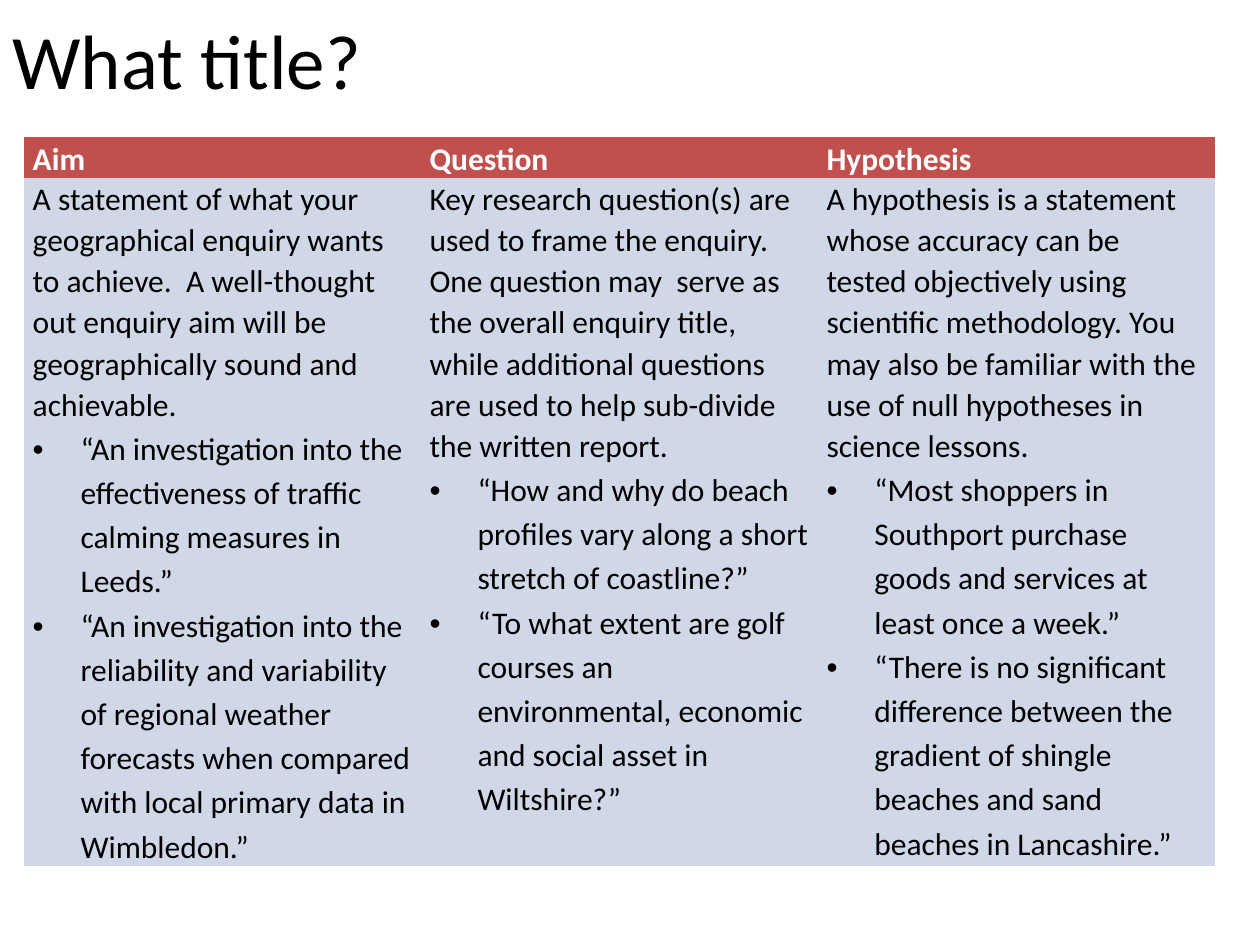
from lxml.etree import SubElement
from pptx import Presentation
from pptx.dml.color import RGBColor
from pptx.enum.text import MSO_ANCHOR
from pptx.oxml.ns import qn
from pptx.util import Inches, Pt

INK, WHITE, RED, PALE = "000000", "FFFFFF", "C0504D", "D0D8E8"
COL_W, ROW_H = 3.15, (0.32, 5.46)  # the body row holds its longest column
INDENT = Inches(0.38)

COLUMNS = [
    ("Aim",
     "A statement of what your geographical enquiry wants to achieve.  A well-thought out "
     "enquiry aim will be geographically sound and achievable.",
     ["“An investigation into the effectiveness of traffic calming measures in Leeds.”",
      "“An investigation into the reliability and variability of regional weather forecasts "
      "when compared with local primary data in Wimbledon.”"]),
    ("Question",
     "Key research question(s) are used to frame the enquiry. One question may  serve as the "
     "overall enquiry title, while additional questions are used to help sub-divide the "
     "written report.",
     ["“How and why do beach profiles vary along a short stretch of coastline?”",
      "“To what extent are golf courses an environmental, economic and social asset in "
      "Wiltshire?”"]),
    ("Hypothesis",
     "A hypothesis is a statement whose accuracy can be tested objectively using scientific "
     "methodology. You may also be familiar with the use of null hypotheses in science lessons.",
     ["“Most shoppers in Southport purchase goods and services at least once a week.”",
      "“There is no significant difference between the gradient of shingle beaches and sand "
      "beaches in Lancashire.”"]),
]


def rgb(color):
    return RGBColor.from_string(color)


def write(p, text, size=18, color=INK, bold=False, spacing=1.07, bullet=False):
    """Fill a paragraph with one formatted run, optionally as a bullet."""
    p.line_spacing = spacing
    r = p.add_run()
    r.text = text
    r.font.name, r.font.size, r.font.bold = "Calibri", Pt(size), bold
    r.font.color.rgb = rgb(color)
    if bullet:
        pPr = p._p.get_or_add_pPr()
        pPr.set("marL", str(INDENT))
        pPr.set("indent", str(-INDENT))
        SubElement(pPr, qn("a:buFont")).set("typeface", "Arial")
        SubElement(pPr, qn("a:buChar")).set("char", "•")


prs = Presentation()
prs.slide_width, prs.slide_height = Inches(10), Inches(7.5)
s = prs.slides.add_slide(prs.slide_layouts[6])

title = s.shapes.add_textbox(0, Inches(-0.16), Inches(9), Inches(1.25))
tf = title.text_frame
tf.word_wrap = True
tf.vertical_anchor = MSO_ANCHOR.MIDDLE
write(tf.paragraphs[0], "What title?", size=44, spacing=1.0)

table = s.shapes.add_table(len(ROW_H), len(COLUMNS), Inches(0.19), Inches(1.09),
                           Inches(COL_W * len(COLUMNS)), Inches(sum(ROW_H))).table
for row, height in zip(table.rows, ROW_H):
    row.height = Inches(height)
for column in table.columns:
    column.width = Inches(COL_W)

# Drop the built-in style so that only the cell fills show
table._tbl.tblPr.find(qn("a:tableStyleId")).text = "{2D5ABB26-0587-4C30-8999-92F81FD0307C}"

for c, (heading, definition, examples) in enumerate(COLUMNS):
    head, body = table.cell(0, c), table.cell(1, c)
    for cell, fill in ((head, RED), (body, PALE)):
        cell.fill.solid()
        cell.fill.fore_color.rgb = rgb(fill)
        cell.margin_left = cell.margin_right = Inches(0.07)
        cell.margin_top = cell.margin_bottom = 0
    write(head.text_frame.paragraphs[0], heading, color=WHITE, bold=True)
    write(body.text_frame.paragraphs[0], definition)
    for example in examples:
        write(body.text_frame.add_paragraph(), example, spacing=1.15, bullet=True)

prs.save("out.pptx")
